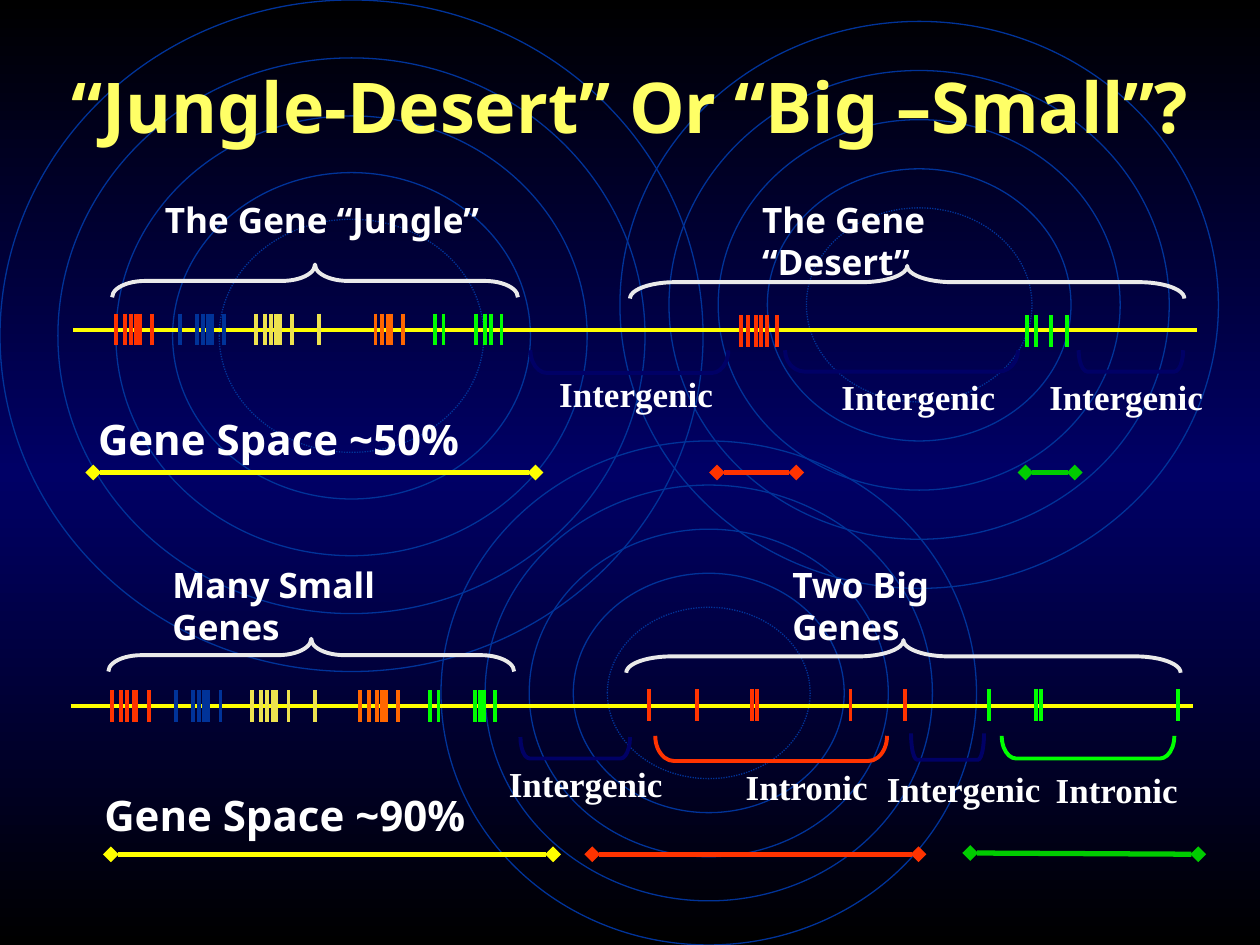
import copy
import pptx
import pptx.util
import pptx.dml.color
import pptx.enum.dml
import pptx.enum.shapes
import pptx.enum.text
import pptx.oxml
import pptx.oxml.ns

PX = 9144  # EMU in one px, 100 px to the inch
SHAPE = pptx.enum.shapes.MSO_SHAPE
ALIGN = pptx.enum.text.PP_ALIGN
ANCHOR = pptx.enum.text.MSO_ANCHOR
C = {
    "black": "000000", "navy": "000066", "blue": "003399", "title": "FFFF66",
    "yellow": "FFFF00", "red": "FF3300", "sand": "EDE24F", "orange": "FF6600",
    "lime": "00FF00", "green": "00CC00", "gray": "EAEAEA", "white": "FFFFFF",
}
LABEL = {"size": 20, "name": "Noto Sans"}
REGION = {"size": 20, "name": "Times New Roman"}
SPACE = {"size": 24, "name": "Noto Sans"}
TITLE = {"size": 40, "name": "Noto Sans", "color": "title"}


def rgb(name):
    return pptx.dml.color.RGBColor.from_string(C[name])


class Deck:
    def __init__(self, w, h):
        self.prs = pptx.Presentation()
        self.prs.slide_width, self.prs.slide_height = w * PX, h * PX
        self.s = self.prs.slides.add_slide(self.prs.slide_layouts[6])

    def background(self, edge, middle):
        fill = self.s.background.fill
        fill.gradient()
        fill.gradient_angle = 270
        first = fill.gradient_stops[0]._gs
        first.addnext(copy.deepcopy(first))
        stops = zip(fill.gradient_stops, (edge, middle, edge), (0, 0.5, 1))
        for stop, color, position in stops:
            stop.color.rgb = rgb(color)
            stop.position = position

    def outline(self, sp, color, width):
        sp.line.color.rgb = rgb(color)
        sp.line.width = pptx.util.Pt(width)

    def shape(self, kind, x, y, w, h, color, width):
        box = [round(v * PX) for v in (x, y, w, h)]
        sp = self.s.shapes.add_shape(kind, *box)
        sp.shadow.inherit = False
        sp.fill.background()
        self.outline(sp, color, width)
        return sp

    def rings(self, x, y, w, h):
        for n in (0, 1, 2, 3, 3.8):
            d = round(0.082 * w * n)
            sp = self.shape(SHAPE.OVAL, x + d, y + d, w - 2 * d, h - 2 * d, "blue", 0.75)
        sp.line.dash_style = pptx.enum.dml.MSO_LINE.ROUND_DOT

    def bracket(self, kind, x, y, w, h, color, *adj):
        """Place a quarter-turned bracket by the box it covers once turned."""
        sp = self.shape(kind, x + (w - h) / 2, y + (h - w) / 2, h, w, color, 2.25)
        sp.rotation = 90
        for i, value in enumerate(adj):
            sp.adjustments[i] = value

    def line(self, x1, y1, x2, y2, color, width=2.25, end=None):
        straight = pptx.enum.shapes.MSO_CONNECTOR.STRAIGHT
        sp = self.s.shapes.add_connector(straight, *(v * PX for v in (x1, y1, x2, y2)))
        self.outline(sp, color, width)
        if end:
            ln = sp.line._get_or_add_ln()
            for tag in ("a:headEnd", "a:tailEnd"):
                el = pptx.oxml.parse_xml(f"<{tag} {pptx.oxml.ns.nsdecls('a')}/>")
                el.set("type", end)
                ln.append(el)
        sp._element.spPr.append(
            pptx.oxml.parse_xml(f"<a:effectLst {pptx.oxml.ns.nsdecls('a')}/>"))

    def ticks(self, y, groups):
        for color, xs in groups:
            for x in xs:
                self.line(x, y, x, y + 25, color)

    def text(self, x, y, w, h, words, style, align=ALIGN.LEFT, anchor=ANCHOR.TOP):
        tf = self.s.shapes.add_textbox(x * PX, y * PX, w * PX, h * PX).text_frame
        tf.word_wrap, tf.vertical_anchor = True, anchor
        p = tf.paragraphs[0]
        p.alignment = align
        r = p.add_run()
        r.text = words
        r.font.color.rgb = rgb(style.get("color", "white"))
        values = {"name": style["name"], "size": pptx.util.Pt(style["size"]), "bold": True}
        for key, value in values.items():
            setattr(r.font, key, value)


def main():
    d = Deck(1000, 750)

    # Backdrop and title
    d.background("black", "navy")
    for box in ((0, 0, 558, 533), (350, 350, 425, 400), (492, 17, 475, 450)):
        d.rings(*box)
    d.text(41, 45, 918, 77, "“Jungle-Desert” Or “Big –Small”?", TITLE,
           ALIGN.CENTER, ANCHOR.MIDDLE)

    # Upper chromosome: gene jungle and gene desert
    d.line(58, 262, 950, 262, "yellow")
    d.ticks(249, (
        ("red", (92, 99, 104, 108, 111, 121)),
        ("blue", (143, 156, 161, 165, 168, 178)),
        ("sand", (203, 210, 215, 219, 222, 232, 253)),
        ("orange", (298, 303, 308, 310, 320)),
        ("lime", (345, 352, 378, 385, 390, 398)),
    ))
    d.ticks(250, (
        ("red", (588, 594, 600, 604, 609, 617)),
        ("lime", (815, 822, 834, 847)),
    ))

    # Lower chromosome: many small genes and two big genes
    d.line(56, 560, 947, 560, "yellow")
    d.ticks(548, (
        ("red", (89, 96, 101, 106, 108, 118)),
        ("blue", (140, 153, 158, 162, 165, 175)),
        ("sand", (200, 207, 212, 217, 219, 229, 250)),
        ("orange", (286, 293, 299, 303, 306, 316)),
        ("lime", (341, 348, 377, 381, 384, 393)),
    ))
    d.ticks(547, (
        ("red", (515, 553, 597, 601, 675, 718)),
        ("lime", (785, 822, 826, 935)),
    ))

    # Braces over the gene groups
    for x, y in ((89, 210), (86, 507)):
        d.bracket(SHAPE.LEFT_BRACE, x, y, 322, 26, "gray", 1.016, 0.5)
        d.bracket(SHAPE.LEFT_BRACE, x + 411, y + 1, 440, 26, "gray", 1.388, 0.5)

    # Group labels
    for x, y, w, words in (
        (121, 153, 280, "The Gene “Jungle”"),
        (595, 153, 265, "The Gene “Desert”"),
        (127, 442, 262, "Many Small Genes"),
        (619, 442, 215, "Two Big Genes"),
    ):
        d.text(x, y, w, 43, words, LABEL)

    # Brackets under the regions
    for x, y, w, h, color, adj in (
        (421, 278, 157, 18, "navy", 0.724),
        (623, 278, 185, 17, "navy", 0.927),
        (856, 278, 83, 17, "navy", 0.416),
        (413, 585, 87, 17, "navy", 0.434),
        (520, 584, 184, 20, "red", 0.747),
        (795, 584, 137, 18, "lime", 0.636),
        (723, 582, 58, 21, "navy", 0.233),
    ):
        d.bracket(SHAPE.RIGHT_BRACKET, x, y, w, h, color, adj)

    # Region labels
    for x, y in ((582, 603), (828, 605)):
        d.text(x, y, 122, 43, "Intronic", REGION)
    for x, y in ((394, 600), (434, 291), (658, 293), (823, 293), (694, 604)):
        d.text(x, y, 146, 43, "Intergenic", REGION)

    # Gene space
    d.text(68, 323, 320, 50, "Gene Space ~50%", SPACE)
    d.text(73, 622, 320, 50, "Gene Space ~90%", SPACE)
    for x1, y1, x2, y2, color in (
        (74, 375, 425, 375, "yellow"),
        (569, 375, 632, 375, "red"),
        (814, 375, 853, 375, "green"),
        (88, 678, 439, 678, "yellow"),
        (470, 678, 729, 678, "red"),
        (770, 677, 951, 678, "green"),
    ):
        d.line(x1, y1, x2, y2, color, 3, "diamond")

    d.prs.save("out.pptx")


if __name__ == "__main__":
    main()
